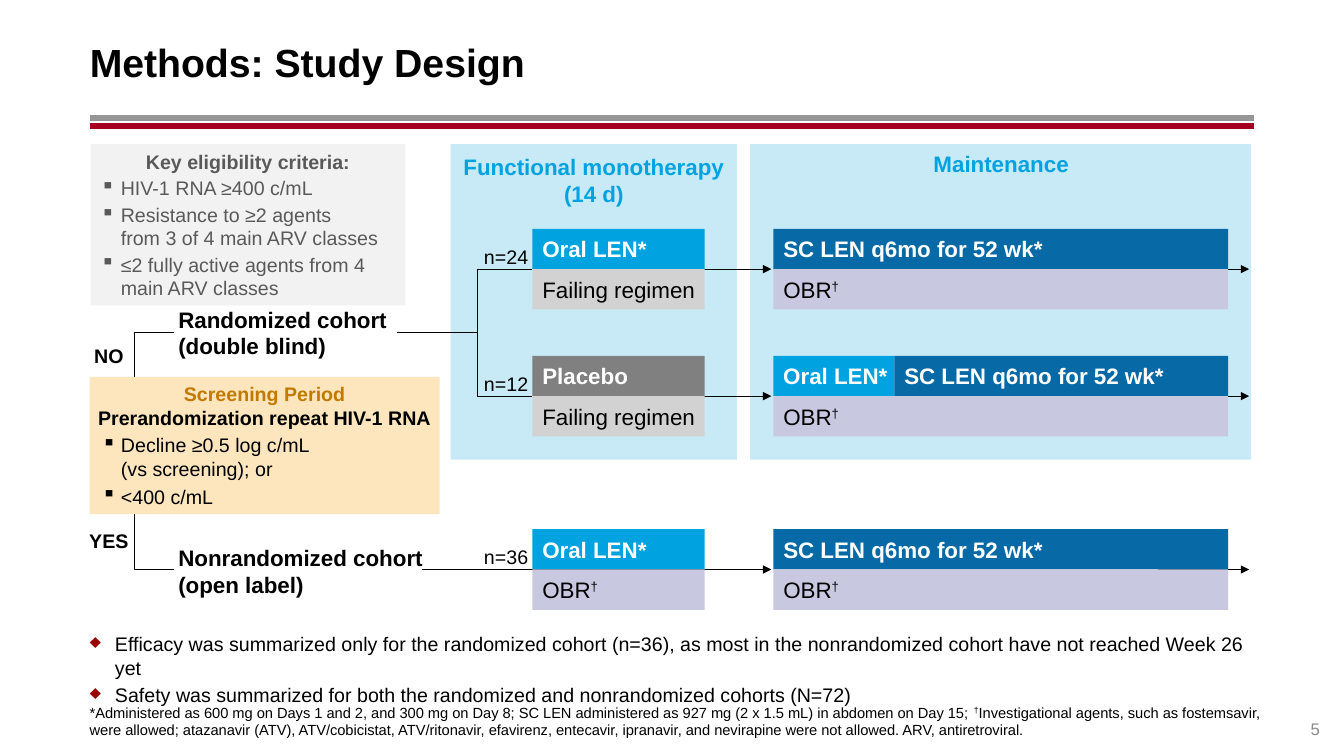
import pptx
import pptx.util
import pptx.dml.color
import pptx.enum.shapes
import pptx.enum.text
import pptx.oxml.ns
from lxml import etree

Inches, Pt = pptx.util.Inches, pptx.util.Pt
SHAPE = pptx.enum.shapes.MSO_SHAPE
ANCHOR = {"t": pptx.enum.text.MSO_ANCHOR.TOP, "m": pptx.enum.text.MSO_ANCHOR.MIDDLE,
          "b": pptx.enum.text.MSO_ANCHOR.BOTTOM}
ALIGN = {"l": pptx.enum.text.PP_ALIGN.LEFT, "c": pptx.enum.text.PP_ALIGN.CENTER,
         "r": pptx.enum.text.PP_ALIGN.RIGHT}
qn = pptx.oxml.ns.qn


def rgb(color):
    return pptx.dml.color.RGBColor.from_string(color)


def write(sp, text, size=14, color="000000", bold=False, align="l", anchor="m",
          ins=(0.1, 0.05, 0.1, 0.05), before=0, bullet=None, bullet_color=None, indent=(0, 0)):
    """Add one paragraph; ^ switches superscript on and off, a newline breaks the line."""
    tf = sp.text_frame
    tf.word_wrap = True
    tf.vertical_anchor = ANCHOR[anchor]
    tf.margin_left, tf.margin_top, tf.margin_right, tf.margin_bottom = map(Inches, ins)
    p = tf.add_paragraph() if tf.text else tf.paragraphs[0]
    p.alignment = ALIGN[align]
    p.space_before = Pt(before)
    if bullet:
        pPr = p._p.get_or_add_pPr()
        pPr.set("marL", str(Inches(indent[0])))
        pPr.set("indent", str(Inches(indent[1])))
        if bullet_color:
            clr = etree.SubElement(pPr, qn("a:buClr"))
            etree.SubElement(clr, qn("a:srgbClr"), val=bullet_color)
        etree.SubElement(pPr, qn("a:buChar"), char=bullet)
    for i, part in enumerate(text.split("^")):
        for j, line in enumerate(part.split("\n")):
            if j:
                p.add_line_break()
            r = p.add_run()
            r.text = line
            r.font.name, r.font.size, r.font.bold = "Arial", Pt(size), bold
            r.font.color.rgb = rgb(color)
            if i % 2:
                r.font._element.set("baseline", "30000")


prs = pptx.Presentation()
prs.slide_width, prs.slide_height = Inches(13.33), Inches(7.5)
s = prs.slides.add_slide(prs.slide_layouts[5])

# Grid: columns, rows and bar height
LEFT, RIGHT = 0.89, 12.44
MONO_X, MONO_W = 5.28, 1.71
MAINT_X, MAINT_W, LEAD_W = 7.67, 4.51, 1.2
BAR_H = 0.4
ROWS = (2.27, 3.53, 5.25)
MIDS = [y + BAR_H for y in ROWS]
FORK_X, BRANCH_X, BRANCH_Y = 4.74, 1.33, 3.3
SKY, NAVY, LILAC, SILVER, GRAY = "00A3E0", "0769A5", "C8C9E1", "D2D2D2", "808080"

# Title
title = s.shapes.title
title.left, title.top, title.width, title.height = map(Inches, (LEFT, 0.18, RIGHT - LEFT, 0.86))
write(title, "Methods: Study Design", size=28, bold=True, ins=(0, 0.05, 0.1, 0.05))

# Phase panels, then the two brackets of the flow
for x, y, w, h, kind, fill in (
        (4.47, 1.43, 2.84, 3.13, SHAPE.RECTANGLE, "C8EAF6"),
        (7.44, 1.43, 4.97, 3.13, SHAPE.RECTANGLE, "C8EAF6"),
        (FORK_X, MIDS[0], MONO_X - FORK_X, MIDS[1] - MIDS[0], SHAPE.LEFT_BRACKET, None),
        (BRANCH_X, BRANCH_Y, 0.4, MIDS[2] - BRANCH_Y, SHAPE.LEFT_BRACKET, None)):
    sp = s.shapes.add_shape(kind, *map(Inches, (x, y, w, h)))
    sp.shadow.inherit = False
    if fill:
        sp.fill.solid()
        sp.fill.fore_color.rgb = rgb(fill)
        sp.line.fill.background()
    else:
        sp.adjustments[0] = 0
        sp.fill.background()
        sp.line.color.rgb = rgb("000000")
        sp.line.width = Pt(0.75)

# Title rules, cohort line and flow arrows: start, end, y, colour, width, arrowhead
lines = [(LEFT, RIGHT, 1.17, "969696", 4.25, False),
         (LEFT, RIGHT, 1.25, "A50021", 4.25, False),
         (3.94, FORK_X, BRANCH_Y, "000000", 0.75, False)]
for start, y in zip((5.57, 5.57, 4.19), MIDS):
    lines += [(start, 7.65, y, "000000", 0.75, True), (11.49, 12.39, y, "000000", 0.75, True)]
for x1, x2, y, color, width, arrow in lines:
    c = s.shapes.add_connector(pptx.enum.shapes.MSO_CONNECTOR.STRAIGHT,
                               Inches(x1), Inches(y), Inches(x2), Inches(y))
    c.line.color.rgb = rgb(color)
    c.line.width = Pt(width)
    if arrow:
        etree.SubElement(c.line._get_or_add_ln(), qn("a:tailEnd"), type="triangle")
    etree.SubElement(c._element.spPr, qn("a:effectLst"))

# Treatment bars: column, width, row, level, text, fill
ORAL, SC, OBR, FAILING = "Oral LEN*", "SC LEN q6mo for 52 wk*", "OBR^†^", "Failing regimen"
bars = [(MONO_X, MONO_W, 0, 0, ORAL, SKY), (MONO_X, MONO_W, 0, 1, FAILING, SILVER),
        (MONO_X, MONO_W, 1, 0, "Placebo", GRAY), (MONO_X, MONO_W, 1, 1, FAILING, SILVER),
        (MONO_X, MONO_W, 2, 0, ORAL, SKY), (MONO_X, MONO_W, 2, 1, OBR, LILAC),
        (MAINT_X, MAINT_W, 0, 0, SC, NAVY), (MAINT_X, LEAD_W, 1, 0, ORAL, SKY),
        (MAINT_X + LEAD_W, MAINT_W - LEAD_W, 1, 0, SC, NAVY), (MAINT_X, MAINT_W, 2, 0, SC, NAVY)]
bars += [(MAINT_X, MAINT_W, row, 1, OBR, LILAC) for row in range(3)]
for x, w, row, level, text, fill in bars:
    sp = s.shapes.add_shape(SHAPE.RECTANGLE,
                            *map(Inches, (x, ROWS[row] + level * BAR_H, w, BAR_H)))
    sp.shadow.inherit = False
    sp.fill.solid()
    sp.fill.fore_color.rgb = rgb(fill)
    sp.line.fill.background()
    write(sp, text, size=16, color="000000" if level else "FFFFFF", bold=not level,
          ins=(0.1, 0.05, 0, 0.05))

# Text boxes: position, fill, paragraphs with their format
flat, no_sides = (0, 0, 0, 0), (0, 0.05, 0, 0.05)
heading = dict(size=16, color=SKY, bold=True, align="c", ins=no_sides)
cohort = dict(size=16, bold=True)
answer = dict(bold=True, align="c", anchor="b")
criterion = dict(color="595959", before=2, bullet="▪", indent=(0.2, -0.2))
screening = dict(anchor="t", ins=no_sides)
decline = dict(screening, before=3, bullet="▪", indent=(0.31, -0.19))
summary = dict(anchor="t", ins=(0, 0.05, 0.1, 0.05), before=3, bullet="♦",
               bullet_color="990000", indent=(0.25, -0.25))
boxes = [
    ((4.54, 1.47, 2.7, 0.64), None, [("Functional monotherapy", heading), ("(14 d)", heading)]),
    ((8.43, 1.44, 3, 0.37), None, [("Maintenance", heading)]),
    ((1.67, 2.98, 2.52, 0.64), None, [("Randomized cohort", cohort), ("(double blind)", cohort)]),
    ((1.67, 5.26, 2.65, 0.81), None, [("Nonrandomized cohort (open label)", cohort)]),
    ((0.77, 3.35, 0.62, 0.34), None, [("NO", answer)]),
    ((0.77, 5.19, 0.62, 0.34), None, [("YES", answer)]),
    ((0.9, 1.43, 3.12, 1.6), "F2F2F2", [
        ("Key eligibility criteria:", dict(color="595959", bold=True, align="c", before=3)),
        ("HIV-1 RNA ≥400 c/mL", criterion),
        ("Resistance to ≥2 agents\nfrom 3 of 4 main ARV classes", criterion),
        ("≤2 fully active agents from 4 main ARV classes", criterion)]),
    ((LEFT, 3.74, 3.47, 1.36), "FDE5BD", [
        ("Screening Period", dict(screening, color="C27900", bold=True, align="c", before=3)),
        ("Prerandomization repeat HIV-1 RNA", dict(screening, bold=True, align="c")),
        ("Decline ≥0.5 log c/mL\n(vs screening); or", decline),
        ("<400 c/mL", decline)]),
    ((LEFT, 6.22, 11.85, 0.61), None, [
        ("Efficacy was summarized only for the randomized cohort (n=36), as most in the "
         "nonrandomized cohort have not reached Week 26 yet", summary),
        ("Safety was summarized for both the randomized and nonrandomized cohorts (N=72)",
         summary)]),
    ((LEFT, 6.9, 11.64, 0.43), None, [
        ("*Administered as 600 mg on Days 1 and 2, and 300 mg on Day 8; SC LEN administered as "
         "927 mg (2 x 1.5 mL) in abdomen on Day 15; ^†^Investigational agents, such as "
         "fostemsavir, were allowed; atazanavir (ATV), ATV/cobicistat, ATV/ritonavir, efavirenz, "
         "entecavir, ipranavir, and nevirapine were not allowed. ARV, antiretroviral.",
         dict(size=10.5, anchor="b", ins=flat))]),
    ((RIGHT, 6.93, 0.65, 0.4), None, [
        ("5", dict(size=12, color="8C8C8C", align="r", anchor="b", ins=flat))])]
boxes += [((4.77, mid - 0.21, 0.5, 0.2), None, [(n, dict(align="c", anchor="b", ins=flat))])
          for n, mid in zip(("n=24", "n=12", "n=36"), MIDS)]
for place, fill, paragraphs in boxes:
    if fill:
        sp = s.shapes.add_shape(SHAPE.RECTANGLE, *map(Inches, place))
        sp.shadow.inherit = False
        sp.fill.solid()
        sp.fill.fore_color.rgb = rgb(fill)
        sp.line.fill.background()
    else:
        sp = s.shapes.add_textbox(*map(Inches, place))
    for text, style in paragraphs:
        write(sp, text, **style)

prs.save("out.pptx")
